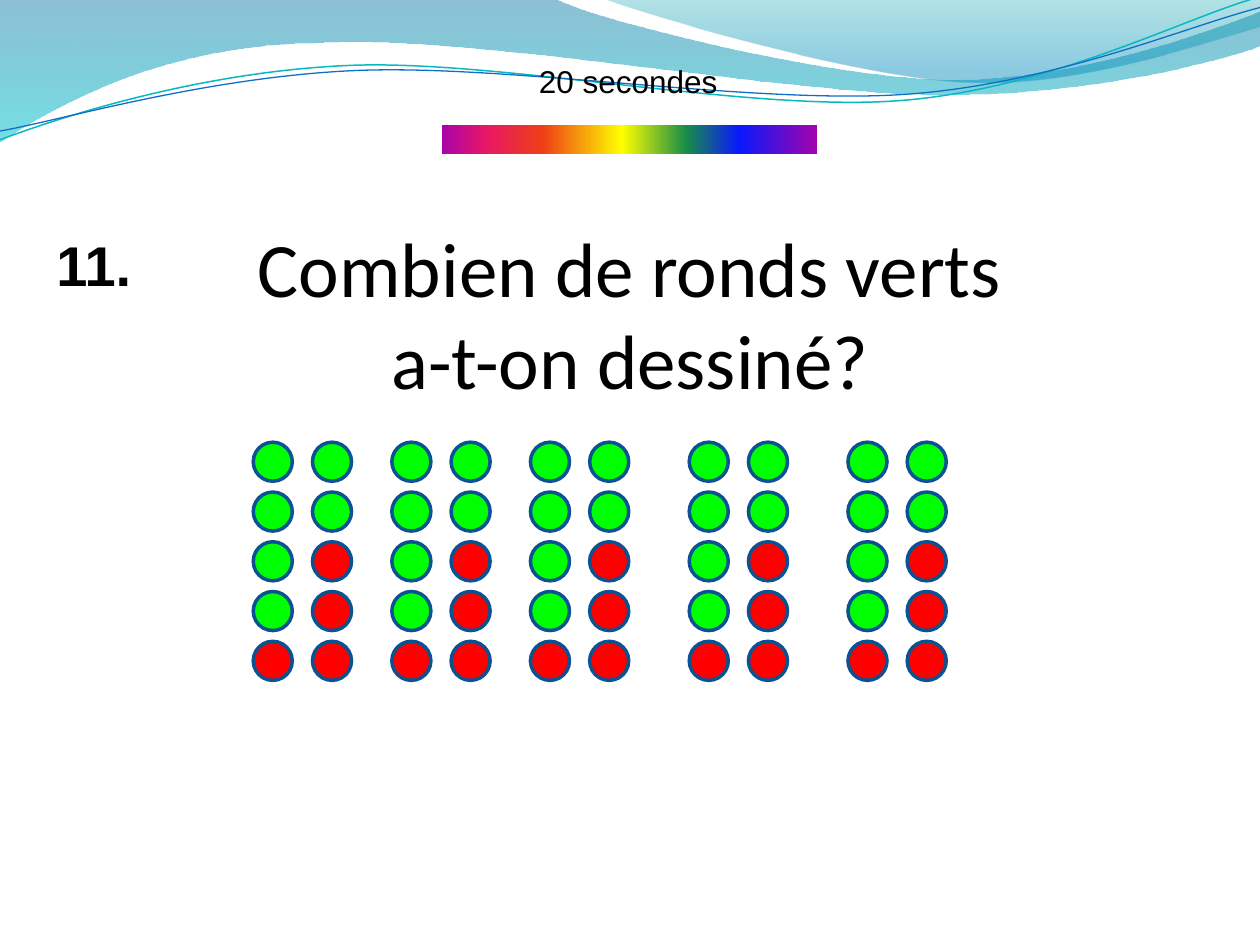
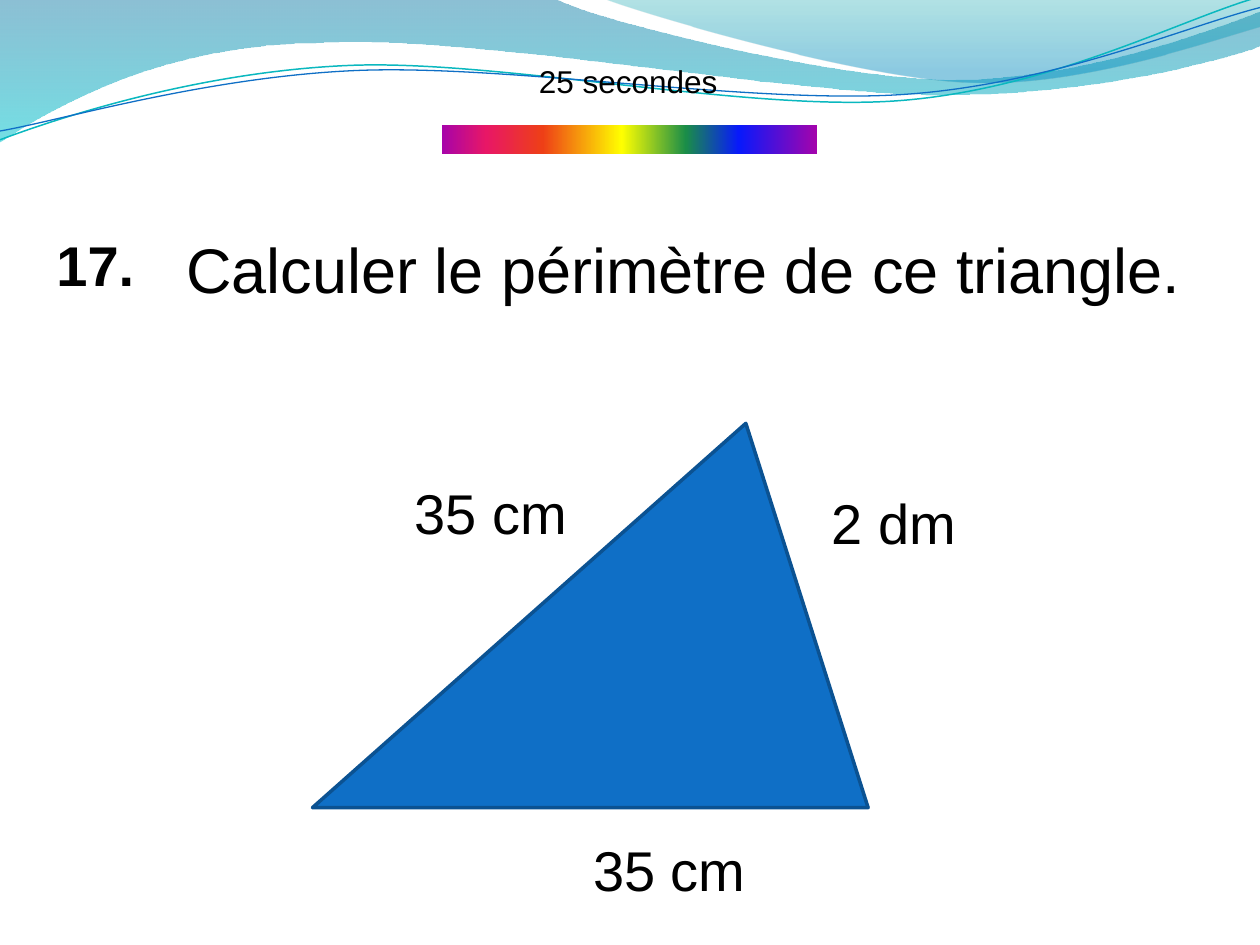
"""Builds two quiz slides: counting green circles and a triangle's perimeter."""
import dataclasses
import itertools

import pptx
import pptx.dml.color
import pptx.enum.shapes
import pptx.enum.text
import pptx.oxml
import pptx.oxml.ns
import pptx.util

Inches = pptx.util.Inches
Pt = pptx.util.Pt
SHAPES = pptx.enum.shapes.MSO_SHAPE
ALIGN = pptx.enum.text.PP_ALIGN
qn = pptx.oxml.ns.qn

COLOURS = {
    "text": "000000",
    "white": "FFFFFF",
    "green": "00FF00",
    "red": "FF0000",
    "blue": "0F6FC6",
    "outline": "0B5292",
    "teal": "0AB8BF",
}

FORMATS = {
    "timer": {"name": "Arial", "size": Pt(18), "bold": False},
    "number": {"name": "Arial", "size": Pt(32), "bold": True},
    "measure": {"name": "Arial", "size": Pt(32), "bold": False},
    "question": {"name": "Arial", "size": Pt(36), "bold": False},
    "large question": {"name": "Calibri", "size": Pt(44), "bold": False},
}


@dataclasses.dataclass(frozen=True)
class Area:
    left: float
    top: float
    width: float
    height: float

    def lengths(self) -> list:
        return [Inches(value) for value in dataclasses.astuple(self)]


@dataclasses.dataclass(frozen=True)
class Label:
    lines: tuple
    area: Area
    style: str
    align: ALIGN = ALIGN.LEFT


@dataclasses.dataclass(frozen=True)
class Stop:
    position: int
    colour: str
    opacity: int = 100


@dataclasses.dataclass(frozen=True)
class Wave:
    start: tuple
    segments: tuple
    stops: tuple = ()
    line: str = ""
    width: float = 0


WAVES = (
    Wave(
        (0, -0.01),
        (
            ((4.4, -0.01),),
            ((4.76, 0.17), (6.64, 0.63), (7.58, 0.63)),
            ((8.53, 0.63), (9.58, 0.26), (10, 0.09)),
            ((10.01, 0.36),),
            ((9.83, 0.44), (8.7, 0.76), (7.46, 0.75)),
            ((6.22, 0.75), (3.82, 0.28), (2.57, 0.34)),
            ((1.29, 0.35), (0.46, 0.83), (-0.01, 1.13)),
        ),
        stops=(Stop(0, "0074A1", 45), Stop(100, "00C6CF", 55)),
    ),
    Wave(
        (4.79, -0.01),
        (
            ((5.09, 0.11), (6.82, 0.62), (7.69, 0.65)),
            ((8.56, 0.69), (9.61, 0.32), (10, 0.21)),
            ((10, 0),),
        ),
        stops=(Stop(0, "00A1A9", 30), Stop(80, "008BBF", 45)),
    ),
    Wave(
        (0, 1.11),
        (
            ((0.48, 0.93), (1.58, 0.57), (2.77, 0.52)),
            ((3.95, 0.47), (5.93, 0.89), (7.13, 0.8)),
            ((8.33, 0.71), (9.38, 0.15), (9.98, -0.02)),
        ),
        line="teal",
        width=0.85,
    ),
    Wave(
        (0, 1.04),
        (
            ((0.47, 0.96), (1.64, 0.61), (2.83, 0.56)),
            ((4.03, 0.51), (5.97, 0.83), (7.17, 0.75)),
            ((8.36, 0.67), (9.41, 0.21), (10, 0.06)),
        ),
        line="blue",
        width=0.75,
    ),
)

RAINBOW = (
    Stop(0, "A603AB"),
    Stop(12, "E81766"),
    Stop(27, "EE3F17"),
    Stop(48, "FFFF00"),
    Stop(65, "1A8D48"),
    Stop(79, "0819FB"),
    Stop(100, "A603AB"),
)

SIDES = (
    Label(("35 cm",), Area(3.19, 3.75, 1.5, 0.64), "measure"),
    Label(("35 cm",), Area(4.61, 6.58, 1.57, 0.64), "measure"),
    Label(("2 dm",), Area(6.5, 3.83, 1.65, 0.64), "measure"),
)


def rgb(name: str) -> pptx.dml.color.RGBColor:
    return pptx.dml.color.RGBColor.from_string(COLOURS[name])


def set_line(shape, colour: str, width: float) -> None:
    shape.line.color.rgb = rgb(colour)
    shape.line.width = Pt(width)


def set_gradient(shape, stops: tuple, angle: int) -> None:
    shape.fill.gradient()
    shape.fill.gradient_angle = angle
    stop_list = next(shape.element.iter(qn("a:gsLst")))
    for old in list(stop_list):
        stop_list.remove(old)
    for stop in stops:
        stop_list.append(pptx.oxml.parse_xml(
            f'<a:gs {pptx.oxml.ns.nsdecls("a")} pos="{stop.position * 1000}">'
            f'<a:srgbClr val="{stop.colour}">'
            f'<a:alpha val="{stop.opacity * 1000}"/></a:srgbClr></a:gs>'
        ))


def bend(shape, segments: tuple) -> None:
    """Turn each three-point segment of a freeform into a cubic curve."""
    corners = iter(list(shape.element.iter(qn("a:lnTo"))))
    for segment in segments:
        group = list(itertools.islice(corners, len(segment)))
        if len(group) == 3:
            curve = pptx.oxml.parse_xml(
                f'<a:cubicBezTo {pptx.oxml.ns.nsdecls("a")}/>'
            )
            group[0].addprevious(curve)
            for corner in group:
                curve.append(corner[0])
                corner.getparent().remove(corner)


def draw_wave(page, wave: Wave):
    points = [
        (Inches(x), Inches(y))
        for x, y in itertools.chain.from_iterable(wave.segments)
    ]
    builder = page.shapes.build_freeform(*map(Inches, wave.start))
    builder.add_line_segments(points, close=bool(wave.stops))
    shape = builder.convert_to_shape()
    shape.shadow.inherit = False
    bend(shape, wave.segments)
    if wave.stops:
        set_gradient(shape, wave.stops, 270)
        shape.line.fill.background()
    else:
        shape.fill.background()
        set_line(shape, wave.line, wave.width)
    return shape


def move_waves_to_master(deck, page) -> None:
    tree = deck.slide_master.shapes.element
    for index, wave in enumerate(WAVES, start=2):
        tree.insert(index, draw_wave(page, wave).element)


def write(box, label: Label) -> None:
    box.left, box.top, box.width, box.height = label.area.lengths()
    frame = box.text_frame
    frame.text = "\n".join(label.lines)
    frame.word_wrap = True
    frame.auto_size = pptx.enum.text.MSO_AUTO_SIZE.SHAPE_TO_FIT_TEXT
    frame.vertical_anchor = pptx.enum.text.MSO_ANCHOR.TOP
    for para in frame.paragraphs:
        para.alignment = label.align
        for span in para.runs:
            for attribute, value in FORMATS[label.style].items():
                setattr(span.font, attribute, value)
            span.font.color.rgb = rgb("text")


def add_label(page, label: Label) -> None:
    write(page.shapes.add_textbox(*label.area.lengths()), label)


def add_figure(page, kind: SHAPES, area: Area, fill: str):
    shape = page.shapes.add_shape(kind, *area.lengths())
    shape.shadow.inherit = False
    shape.fill.solid()
    shape.fill.fore_color.rgb = rgb(fill)
    set_line(shape, "outline", 2)
    return shape


def add_question(deck, number: int, seconds: int, question: Label):
    page = deck.slides.add_slide(deck.slide_layouts.get_by_name("Title Only"))
    write(page.shapes.title, question)
    add_label(page, Label((f"{number}.",), Area(0.35, 1.78, 1, 0.64), "number"))
    add_label(page, Label(
        (f"{seconds} secondes",), Area(3.5, 0.44, 2.97, 0.4), "timer", ALIGN.CENTER
    ))
    bar = page.shapes.add_shape(
        SHAPES.RECTANGLE, *Area(3.5, 0.99, 2.99, 0.24).lengths()
    )
    bar.shadow.inherit = False
    set_gradient(bar, RAINBOW, 0)
    set_line(bar, "white", 0.75)
    return page


def add_circles(page) -> None:
    """Draw five blocks of ten circles, six green in each."""
    for block_left in itertools.accumulate((2.01, 1.1, 1.1, 1.26, 1.26)):
        for column, green_count in enumerate((4, 2)):
            for row in range(5):
                area = Area(
                    block_left + 0.47 * column, 3.51 + 0.395 * row, 0.31, 0.31
                )
                colour = "green" if row < green_count else "red"
                add_figure(page, SHAPES.FLOWCHART_CONNECTOR, area, colour)


def main() -> None:
    deck = pptx.Presentation()
    deck.slide_width, deck.slide_height = Inches(10), Inches(7.5)

    circles = add_question(deck, 11, 20, Label(
        ("Combien de ronds verts", "a-t-on dessiné?"),
        Area(0, 1.7, 10, 1.58), "large question", ALIGN.CENTER,
    ))
    add_circles(circles)
    move_waves_to_master(deck, circles)

    perimeter = add_question(deck, 17, 25, Label(
        ("Calculer le périmètre de ce triangle.",),
        Area(1.38, 1.78, 8.27, 0.71), "question",
    ))
    triangle = add_figure(
        perimeter, SHAPES.ISOSCELES_TRIANGLE, Area(2.48, 3.36, 4.41, 3.05), "blue"
    )
    triangle.adjustments[0] = 0.78
    for side in SIDES:
        add_label(perimeter, side)

    deck.save("out.pptx")


if __name__ == "__main__":
    main()
